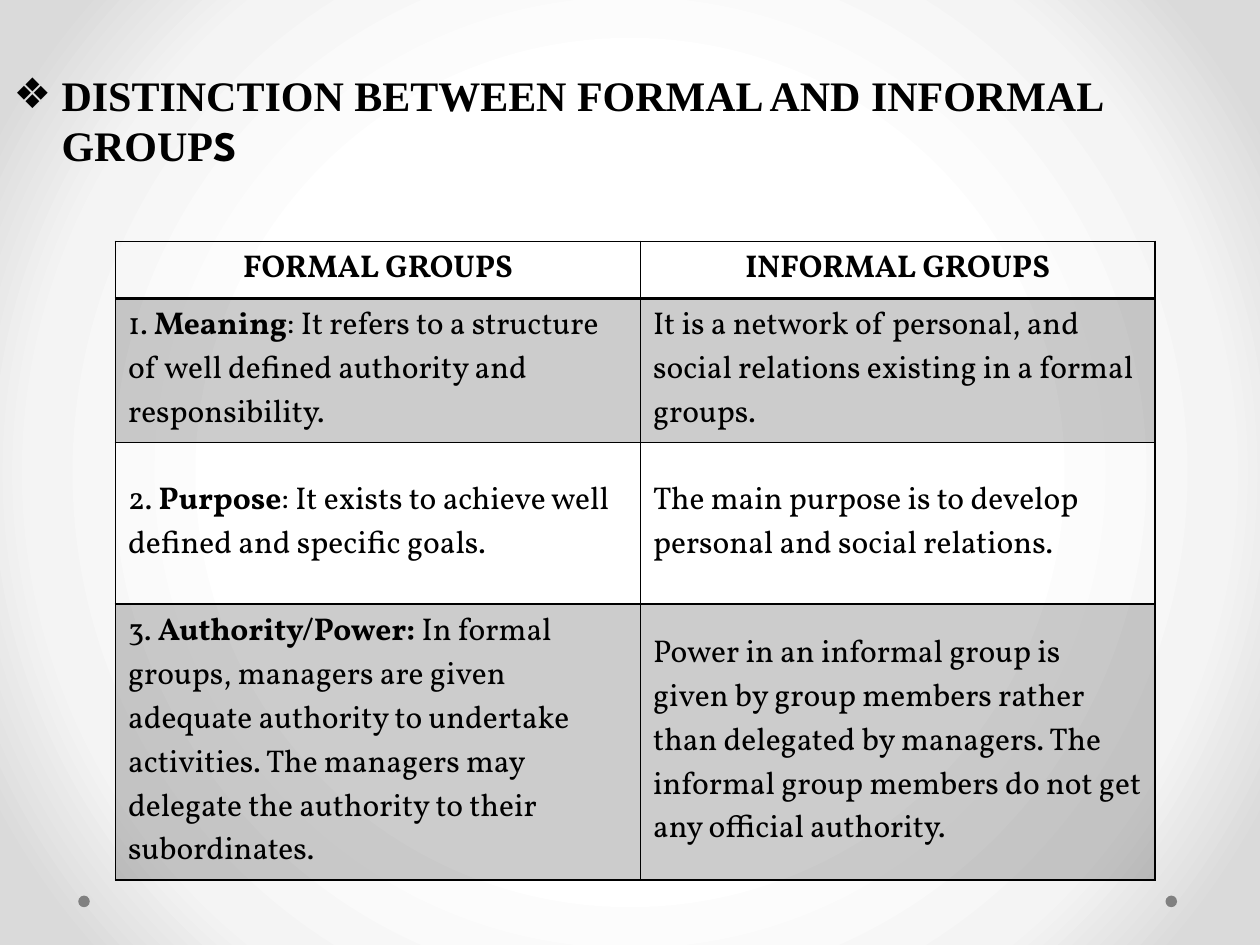
from lxml.etree import SubElement
from pptx import Presentation
from pptx.dml.color import RGBColor
from pptx.enum.shapes import MSO_SHAPE
from pptx.enum.text import MSO_ANCHOR, MSO_AUTO_SIZE, PP_ALIGN
from pptx.oxml import parse_xml
from pptx.oxml.ns import nsdecls, qn
from pptx.util import Inches, Pt

COLORS = {"ink": "000000", "dot": "808080", "center": "FFFFFF", "middle": "F4F4F4", "edge": "DADADA"}
ROWS = [
    (5.3, ("", "FORMAL GROUPS", ""), ("", "INFORMAL GROUPS", "")),
    (11.5,
     ("1. ", "Meaning", ": It refers to a structure of well defined authority and responsibility."),
     ("It is a network of personal, and social relations existing in a formal groups.", "", "")),
    (15.4,
     ("2. ", "Purpose", ": It exists to achieve well defined and specific goals."),
     ("The main purpose is to develop personal and social relations.", "", "")),
    (21.8,
     ("3. ", "Authority/Power: ", "In formal groups, managers are given adequate authority to undertake "
      "activities. The managers may delegate the authority to their subordinates."),
     ("Power in an informal group is given by group members rather than delegated by managers. "
      "The informal group members do not get any official authority.", "", "")),
]


class GroupsSlide:
    """Style and current slide, measured on a grid of 120 columns by 90 rows."""

    def __init__(self, deck):
        self.page = deck.slides.add_slide(deck.slide_layouts[1])
        title = self.page.shapes.title.element
        title.getparent().remove(title)
        self.unit = deck.slide_width / 120

    def grid(self, *steps):
        return [round(step * self.unit) for step in steps]

    def color(self, name):
        return RGBColor.from_string(COLORS[name])

    def span(self, para, text, **values):
        span = para.add_run()
        span.text = text
        for name, value in values.items():
            setattr(span.font, name, value)
        span.font.color.rgb = self.color("ink")

    def background(self, stops):
        self.page.background.fill.solid()
        properties = self.page.background._cSld.bg.bgPr
        marks = "".join(
            f'<a:gs pos="{share * 1000}"><a:srgbClr val="{COLORS[name]}"/></a:gs>' for share, name in stops)
        properties.replace(properties[0], parse_xml(
            f'<a:gradFill {nsdecls("a")} rotWithShape="1"><a:gsLst>{marks}</a:gsLst><a:path path="circle">'
            '<a:fillToRect l="50000" t="50000" r="50000" b="50000"/></a:path></a:gradFill>'))

    def dot(self, left, top, size):
        dot = self.page.shapes.add_shape(MSO_SHAPE.OVAL, *self.grid(left, top, size, size))
        dot.shadow.inherit = False
        dot.fill.solid()
        dot.fill.fore_color.rgb = self.color("dot")
        dot.line.fill.background()

    def heading(self, place, spans):
        box = self.page.placeholders[1]
        for name, value in zip(("left", "top", "width", "height"), self.grid(*place)):
            setattr(box, name, value)
        box.text_frame.auto_size = MSO_AUTO_SIZE.NONE
        para = box.text_frame.paragraphs[0]
        for text, font in spans:
            self.span(para, text, name=font, size=Pt(24), bold=True)
        properties = para._p.get_or_add_pPr()
        for name, value in {"marL": 0.38, "indent": -0.38}.items():
            properties.set(name, str(Inches(value)))
        spacing = SubElement(properties, qn("a:spcBef"))
        SubElement(spacing, qn("a:spcPct"), val="20000")
        SubElement(properties, qn("a:buChar"), char="❖")

    def border(self, cell, side, width):
        line = SubElement(cell._tc.get_or_add_tcPr(), qn(f"a:ln{side}"), w=str(Pt(width)))
        fill = SubElement(line, qn("a:solidFill"))
        SubElement(fill, qn("a:srgbClr"), val=COLORS["ink"])

    def shade(self, cell, percent):
        cell.fill.solid()
        cell.fill.fore_color.rgb = self.color("ink")
        tint = cell._tc.tcPr.find(qn("a:solidFill")).find(qn("a:srgbClr"))
        SubElement(tint, qn("a:alpha"), val=str(percent * 1000))

    def cell(self, cell, row, parts):
        cell.vertical_anchor = MSO_ANCHOR.MIDDLE
        para = cell.text_frame.paragraphs[0]
        para.alignment = PP_ALIGN.LEFT if row else PP_ALIGN.CENTER
        for text, bold in zip(parts, (False, True, False)):
            if text:
                self.span(para, text, name="Vollkorn", size=Pt(18), bold=bold)
        widths = {"L": 1, "R": 1, "T": 2 if row == 1 else 1, "B": 1 if row else 2}
        for side, width in widths.items():
            self.border(cell, side, width)
        if row % 2:
            self.shade(cell, 20)
        else:
            cell.fill.background()

    def table(self, left, top, columns, rows):
        place = self.grid(left, top, sum(columns), sum(row[0] for row in rows))
        table = self.page.shapes.add_table(len(rows), len(columns), *place).table
        table.first_row = table.horz_banding = False
        for column, width in zip(table.columns, self.grid(*columns)):
            column.width = width
        for index, (height, *texts) in enumerate(rows):
            table.rows[index].height = self.grid(height)[0]
            for column, parts in enumerate(texts):
                self.cell(table.cell(index, column), index, parts)


def main():
    deck = Presentation()
    deck.slide_width, deck.slide_height = Inches(10), Inches(7.5)
    slide = GroupsSlide(deck)
    slide.background([(50, "center"), (76, "middle"), (92, "edge")])
    for left in (7.45, 111):
        slide.dot(left, 85.3, 1.1)
    slide.heading((0.1, 6, 117.8, 74), [
        ("DISTINCTION BETWEEN FORMAL AND INFORMAL GROUP", "Times New Roman"), ("S", "League Spartan")])
    slide.table(11, 23, (50, 49), ROWS)
    deck.save("out.pptx")


if __name__ == "__main__":
    main()
